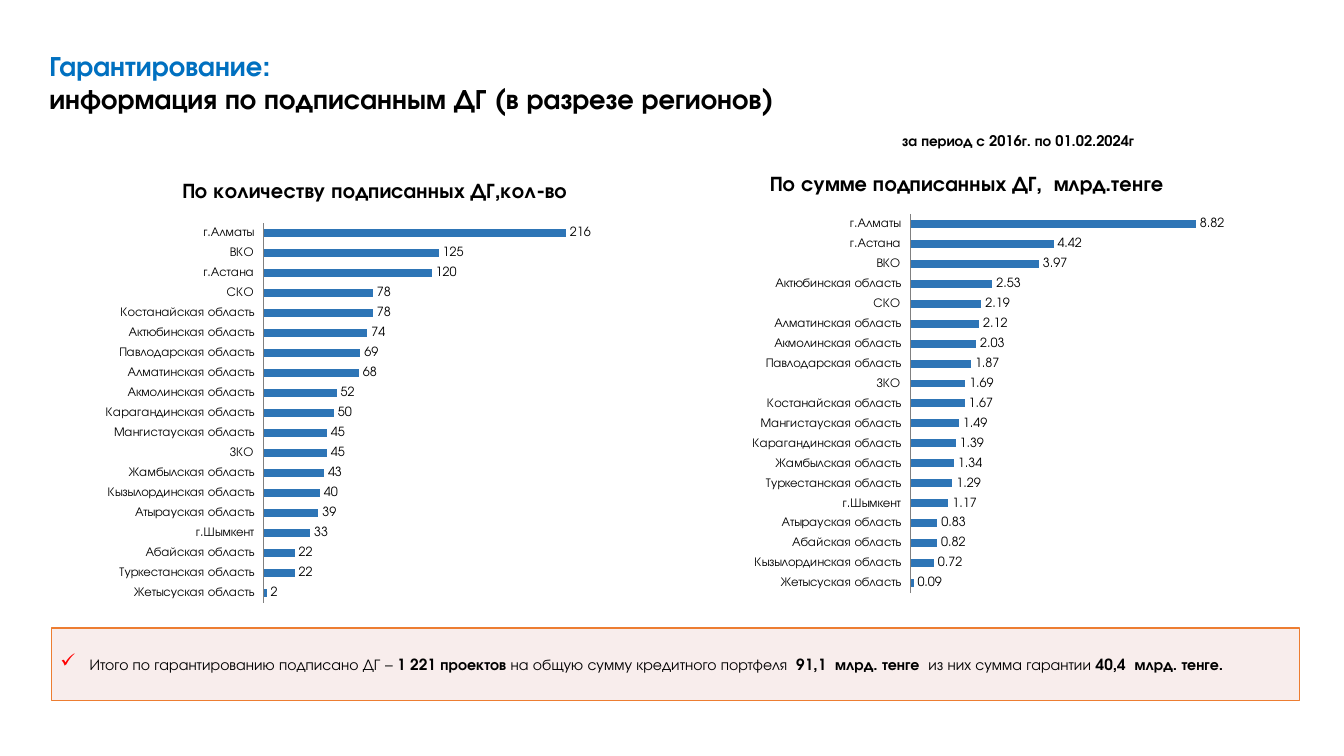
"""Build the slide on signed guarantee agreements by region."""
from dataclasses import dataclass

from lxml import etree
from pptx import Presentation
from pptx.chart.data import CategoryChartData
from pptx.dml.color import RGBColor
from pptx.enum.chart import XL_CHART_TYPE as ChartType
from pptx.enum.chart import XL_LABEL_POSITION as LabelPosition
from pptx.enum.chart import XL_TICK_LABEL_POSITION as TickLabelPosition
from pptx.enum.chart import XL_TICK_MARK as TickMark
from pptx.enum.shapes import MSO_SHAPE as Shape
from pptx.enum.text import MSO_ANCHOR as Anchor
from pptx.enum.text import PP_ALIGN as Align
from pptx.oxml.ns import qn
from pptx.slide import Slide
from pptx.text.text import Font
from pptx.util import Inches, Pt

FONT = "TeX Gyre Adventor"
BLACK, BLUE, BAR_BLUE = "000000", "0070C0", "2E75B6"
ORANGE, PINK, RED, GREY = "ED7D31", "F2DCDB", "FF0000", "808080"


@dataclass(frozen=True)
class RegionChart:
    title: str
    box: tuple[float, float, float, float]
    plot: tuple[float, float, float, float]
    title_at: tuple[float, float]
    axis_max: float
    number_format: str
    regions: dict[str, float]


CHARTS = [
    RegionChart(
        "По количеству подписанных ДГ,кол-во", (0.64, 1.56, 6.28, 4.68),
        (0.315, 0.14, 0.552, 0.805), (0.18, 0.04), 250, "General",
        {"Жетысуская область": 2, "Туркестанская область": 22, "Абайская область": 22,
         "г.Шымкент": 33, "Атырауская область": 39, "Кызылординская область": 40,
         "Жамбылская область": 43, "ЗКО": 45, "Мангистауская область": 45,
         "Карагандинская область": 50, "Акмолинская область": 52,
         "Алматинская область": 68, "Павлодарская область": 69,
         "Актюбинская область": 74, "Костанайская область": 78, "СКО": 78,
         "г.Астана": 120, "ВКО": 125, "г.Алматы": 216}),
    RegionChart(
        "По сумме подписанных ДГ,  млрд.тенге", (6.54, 1.54, 6.23, 4.76),
        (0.4, 0.122, 0.515, 0.791), (0.17, 0.03), 10, "#,##0.00",
        {"Жетысуская область": 0.09, "Кызылординская область": 0.72,
         "Абайская область": 0.82, "Атырауская область": 0.83, "г.Шымкент": 1.17,
         "Туркестанская область": 1.29, "Жамбылская область": 1.34,
         "Карагандинская область": 1.39, "Мангистауская область": 1.49,
         "Костанайская область": 1.67, "ЗКО": 1.69, "Павлодарская область": 1.87,
         "Акмолинская область": 2.03, "Алматинская область": 2.12, "СКО": 2.19,
         "Актюбинская область": 2.53, "ВКО": 3.97, "г.Астана": 4.42, "г.Алматы": 8.82}),
]

SUMMARY = [
    ("Итого по гарантированию подписано ДГ – ", False),
    ("1 221 проектов ", True),
    ("на общую сумму кредитного портфеля  ", False),
    ("91,1  млрд. тенге  ", True),
    ("из них сумма гарантии", False),
    (" 40,4  млрд. тенге.", True),
]


def rgb(color: str) -> RGBColor:
    return RGBColor.from_string(color)


def style(font: Font, size: float, bold: bool | None = None, color: str | None = BLACK) -> None:
    font.name, font.size, font.bold = FONT, Pt(size), bold
    if color:
        font.color.rgb = rgb(color)


def place(parent: etree._Element, index: int, inner: bool = False, **fractions: float) -> None:
    for old in parent.findall(qn("c:layout")):
        parent.remove(old)
    layout = etree.Element(qn("c:layout"))
    manual = etree.SubElement(layout, qn("c:manualLayout"))
    settings = {"layoutTarget": "inner"} if inner else {}
    settings |= {"xMode": "edge", "yMode": "edge"}
    for tag, value in (settings | fractions).items():
        etree.SubElement(manual, qn(f"c:{tag}"), val=str(value))
    parent.insert(index, layout)


def add_region_chart(slide: Slide, spec_: RegionChart) -> None:
    data = CategoryChartData(number_format=spec_.number_format)
    data.categories = list(spec_.regions)
    data.add_series("Series 1", list(spec_.regions.values()))
    chart = slide.shapes.add_chart(
        ChartType.BAR_CLUSTERED, *map(Inches, spec_.box), data).chart
    style(chart.font, 9)
    chart.has_legend = False

    chart.has_title = True
    heading = chart.chart_title.text_frame.paragraphs[0]
    heading.text = spec_.title
    style(heading.font, 15, True)
    x, y = spec_.title_at
    place(chart.chart_title._element, 1, x=x, y=y)
    x, y, w, h = spec_.plot
    place(chart._chartSpace.chart.plotArea, 0, True, x=x, y=y, w=w, h=h)

    regions_axis, values_axis = chart.category_axis, chart.value_axis
    regions_axis.major_tick_mark = regions_axis.minor_tick_mark = TickMark.NONE
    regions_axis.tick_label_position = TickLabelPosition.LOW
    regions_axis.format.line.color.rgb = rgb(GREY)
    regions_axis.format.line.width = Pt(0.75)
    style(regions_axis.tick_labels.font, 9)
    values_axis.has_major_gridlines = False
    values_axis.minimum_scale, values_axis.maximum_scale = 0, spec_.axis_max
    values_axis.visible = False

    plot = chart.plots[0]
    plot.gap_width, plot.vary_by_categories = 150, False
    bars = plot.series[0].format.fill
    bars.solid()
    bars.fore_color.rgb = rgb(BAR_BLUE)
    plot.has_data_labels = True
    labels = plot.data_labels
    labels.show_value, labels.position = True, LabelPosition.OUTSIDE_END
    labels.number_format, labels.number_format_is_linked = spec_.number_format, False
    style(labels.font, 9)


def add_headings(slide: Slide) -> None:
    headline = slide.shapes.add_textbox(*map(Inches, (0.39, 0.43, 8.58, 0.77))).text_frame
    headline.word_wrap = True
    paragraph = headline.paragraphs[0]
    style(paragraph.font, 20, True, None)
    topic = paragraph.add_run()
    topic.text = "Гарантирование:"
    topic.font.color.rgb = rgb(BLUE)
    paragraph.add_line_break()
    subject = paragraph.add_run()
    subject.text = "информация по подписанным ДГ (в разрезе регионов)"
    subject.font.color.rgb = rgb(BLACK)

    period = slide.shapes.add_textbox(*map(Inches, (8.85, 1.26, 2.64, 0.28))).text_frame
    period.word_wrap = False
    period.text = "за период с 2016г. по 01.02.2024г"
    style(period.paragraphs[0].font, 10.5, True)


def add_summary(slide: Slide) -> None:
    panel = slide.shapes.add_shape(
        Shape.RECTANGLE, *map(Inches, (0.51, 6.23, 12.38, 0.72)))
    panel.shadow.inherit = False
    panel.fill.solid()
    panel.fill.fore_color.rgb = rgb(PINK)
    tint = panel._element.spPr.find(qn("a:solidFill"))[0]
    etree.SubElement(tint, qn("a:alpha"), val="50000")
    panel.line.color.rgb = rgb(ORANGE)
    panel.line.width = Pt(1)

    frame = panel.text_frame
    frame.word_wrap, frame.vertical_anchor = True, Anchor.MIDDLE
    frame.margin_left = frame.margin_right = Inches(0.08)
    frame.margin_top = frame.margin_bottom = Inches(0.04)
    paragraph = frame.paragraphs[0]
    paragraph.alignment, paragraph.space_after = Align.LEFT, Pt(6)
    properties = paragraph._p.get_or_add_pPr()
    properties.set("marL", str(Inches(0.3)))
    properties.set("indent", str(Inches(-0.29)))
    bullet_color = etree.SubElement(properties, qn("a:buClr"))
    etree.SubElement(bullet_color, qn("a:srgbClr"), val=RED)
    etree.SubElement(properties, qn("a:buSzPct"), val="125000")
    etree.SubElement(properties, qn("a:buChar"), char="✓")
    for words, bold in SUMMARY:
        run = paragraph.add_run()
        run.text = words
        style(run.font, 11, bold)


def main() -> None:
    deck = Presentation()
    deck.slide_width, deck.slide_height = Inches(13.33), Inches(7.5)
    slide = deck.slides.add_slide(deck.slide_layouts[6])
    add_headings(slide)
    add_summary(slide)
    for region_chart in CHARTS:
        add_region_chart(slide, region_chart)
    deck.save("out.pptx")


if __name__ == "__main__":
    main()
